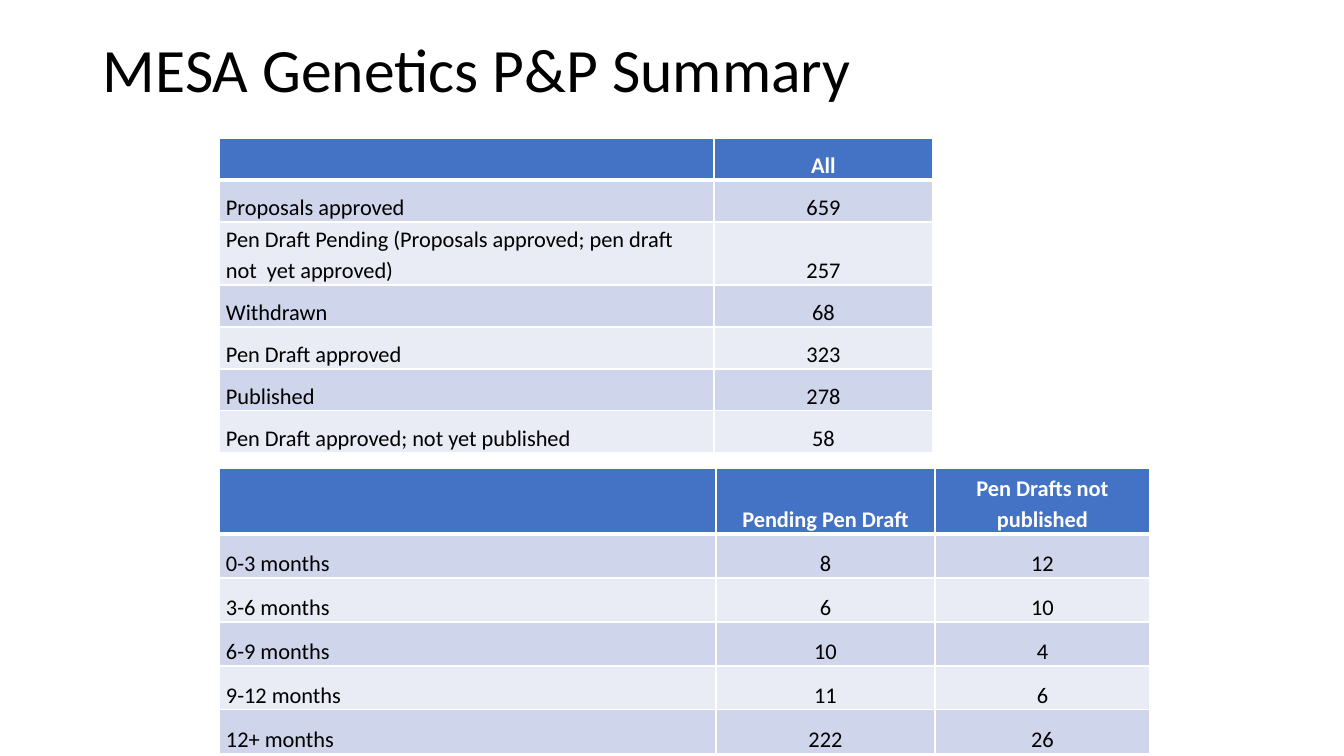
from lxml import etree
from pptx import Presentation
from pptx.dml.color import RGBColor
from pptx.enum.text import MSO_ANCHOR, PP_ALIGN
from pptx.oxml.ns import qn
from pptx.util import Pt

PX = 914400 / 100.8
FONT = "Calibri"
WHITE = RGBColor(0xFF, 0xFF, 0xFF)
BLACK = RGBColor(0x00, 0x00, 0x00)
BLUE = RGBColor(0x44, 0x72, 0xC4)
BAND_DARK = RGBColor(0xCF, 0xD5, 0xEA)
BAND_LIGHT = RGBColor(0xE9, 0xEB, 0xF5)
MIDDLE, BOTTOM = MSO_ANCHOR.MIDDLE, MSO_ANCHOR.BOTTOM
LEFT, CENTER = PP_ALIGN.LEFT, PP_ALIGN.CENTER

PROPOSALS = [
    ("", "All"),
    ("Proposals approved", "659"),
    ("Pen Draft Pending (Proposals approved; pen draft not  yet approved)", "257"),
    ("Withdrawn", "68"),
    ("Pen Draft approved", "323"),
    ("Published", "278"),
    ("Pen Draft approved; not yet published", "58"),
]
WAITING_TIMES = [
    ("", "Pending Pen Draft", "Pen Drafts not published"),
    ("0-3 months", "8", "12"),
    ("3-6 months", "6", "10"),
    ("6-9 months", "10", "4"),
    ("9-12 months", "11", "6"),
    ("12+ months", "222", "26"),
]


def px(n):
    return round(n * PX)


def style_font(font, size, color, bold=False):
    font.name = FONT
    font.size = Pt(size)
    font.bold = bold
    font.color.rgb = color


def add_title(slide, text, x, y, w, h):
    tf = slide.shapes.add_textbox(px(x), px(y), px(w), px(h)).text_frame
    tf.word_wrap = True
    tf.vertical_anchor = MIDDLE
    p = tf.paragraphs[0]
    p.line_spacing = 0.9
    r = p.add_run()
    r.text = text
    style_font(r.font, 44, BLACK)


def add_border(cell, side, width):
    tc_pr = cell._tc.get_or_add_tcPr()
    ln = etree.SubElement(tc_pr, qn(f"a:ln{side}"), w=str(Pt(width)))
    fill = etree.SubElement(ln, qn("a:solidFill"))
    etree.SubElement(fill, qn("a:srgbClr"), val=str(WHITE))


def fill_cell(cell, text, row, col):
    header = row == 0
    for side in "LRTB":
        thick = (side == "B" and row == 0) or (side == "T" and row == 1)
        add_border(cell, side, 3 if thick else 1)
    cell.fill.solid()
    cell.fill.fore_color.rgb = BLUE if header else BAND_DARK if row % 2 else BAND_LIGHT
    cell.margin_left = cell.margin_right = px(7)
    cell.margin_top = cell.margin_bottom = 0
    cell.vertical_anchor = BOTTOM
    if text:
        p = cell.text_frame.paragraphs[0]
        p.alignment = CENTER if col else LEFT
        p.line_spacing = 1.15
        r = p.add_run()
        r.text = text
        style_font(r.font, 16, WHITE if header else BLACK, header)


def add_summary_table(slide, data, x, y, widths, heights):
    table = slide.shapes.add_table(
        len(data), len(widths), px(x), px(y), px(sum(widths)), px(sum(heights))
    ).table
    for column, width in zip(table.columns, widths):
        column.width = px(width)
    for i, (values, height) in enumerate(zip(data, heights)):
        table.rows[i].height = px(height)
        for j, text in enumerate(values):
            fill_cell(table.cell(i, j), text, i, j)


def main():
    prs = Presentation()
    prs.slide_width, prs.slide_height = px(1344), px(756)
    slide = prs.slides.add_slide(prs.slide_layouts[6])
    add_title(slide, "MESA Genetics P&P Summary", 93, 24, 1159, 98)
    add_summary_table(slide, PROPOSALS, 219, 138, [495, 219], [42, 42, 63] + [42] * 4)
    add_summary_table(slide, WAITING_TIMES, 219, 468, [497, 219, 215], [66] + [44] * 5)
    prs.save("out.pptx")


if __name__ == "__main__":
    main()
